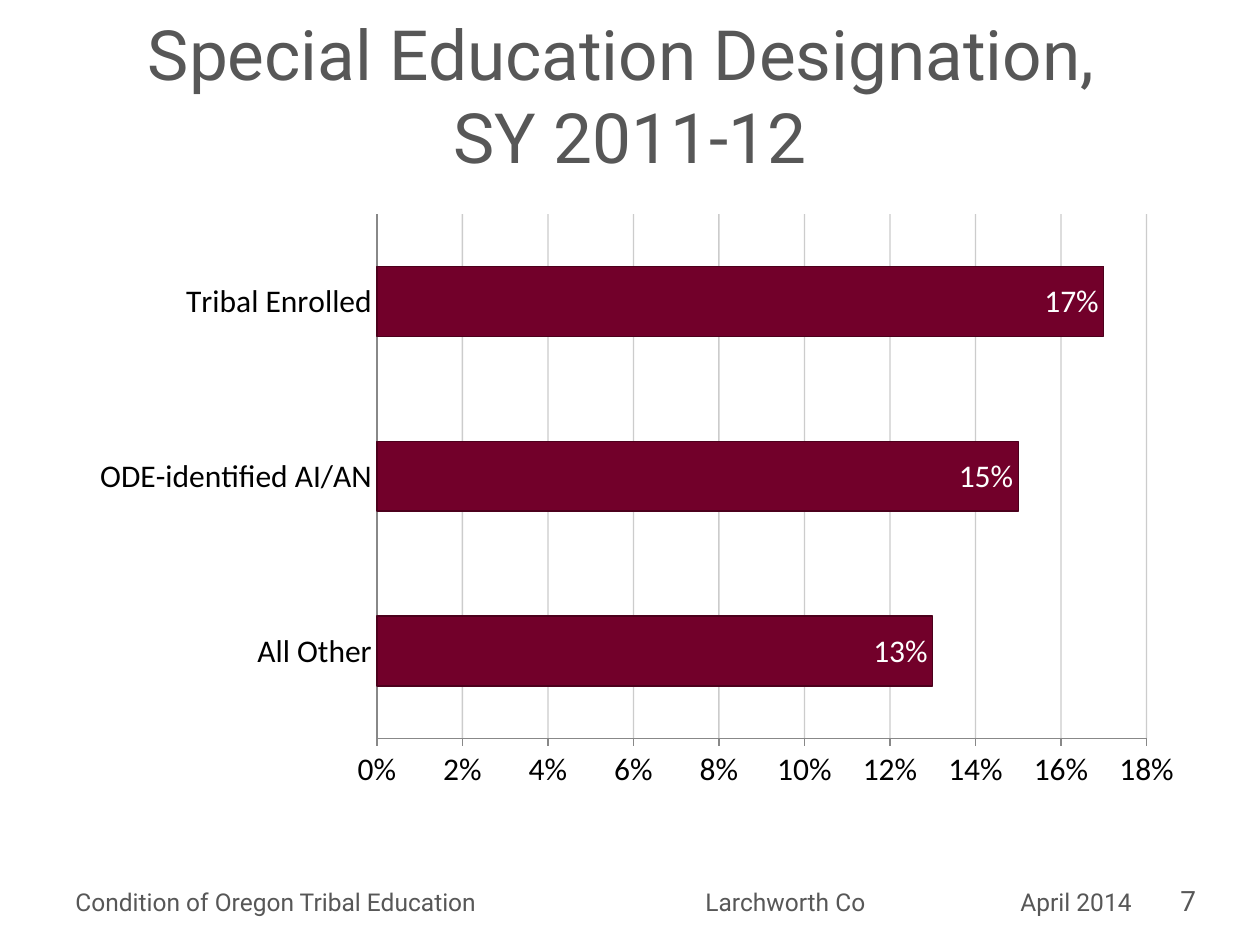
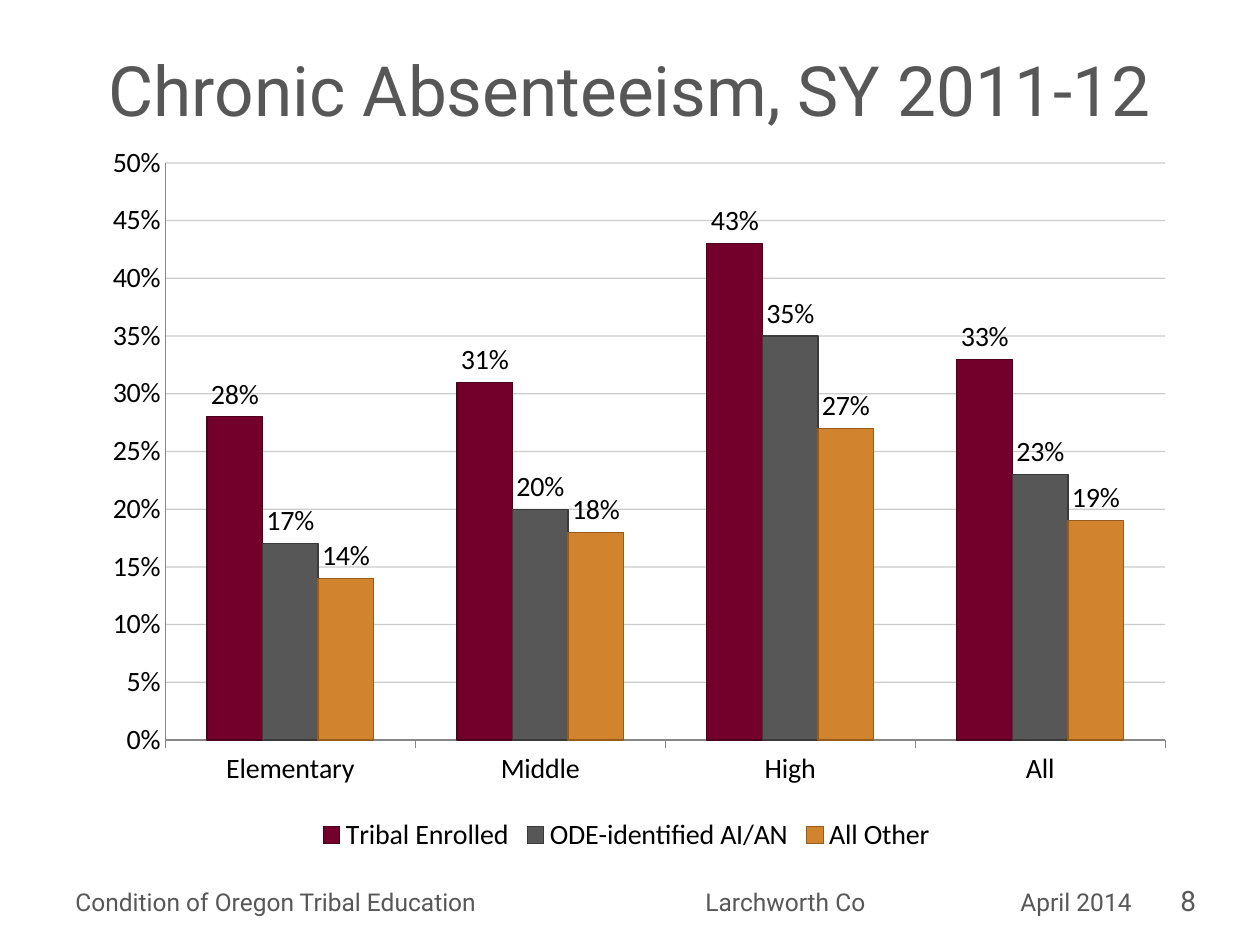
from dataclasses import dataclass

import pptx
import pptx.chart.data
import pptx.dml.color
import pptx.enum.chart
import pptx.enum.text
import pptx.oxml
import pptx.oxml.ns
import pptx.util

Pt = pptx.util.Pt
RGBColor = pptx.dml.color.RGBColor
XL = pptx.enum.chart
qn = pptx.oxml.ns.qn

# Shared colours and fonts
MAROON = RGBColor(0x72, 0x00, 0x2A)
MAROON_EDGE = RGBColor(0x4C, 0x00, 0x1C)
GREY = RGBColor(0x57, 0x57, 0x57)
GREY_EDGE = RGBColor(0x3A, 0x3A, 0x3A)
ORANGE = RGBColor(0xD1, 0x83, 0x2E)
ORANGE_EDGE = RGBColor(0x96, 0x5C, 0x1C)
AXIS = RGBColor(0x88, 0x88, 0x88)
BLACK = RGBColor(0, 0, 0)
WHITE = RGBColor(255, 255, 255)
TEXT_FONT = "Roboto"
CHART_FONT = "Calibri"
PERCENT = "0%"

FOOTER = "Condition of Oregon Tribal Education\tLarchworth Co\tApril 2014"
FOOTER_TABS = (360, 540)


@dataclass
class Series:
    name: str
    values: tuple[float, ...]
    fill: RGBColor
    edge: RGBColor


@dataclass
class ChartSlide:
    number: int
    title: str
    title_top: float
    box: tuple[float, float, float, float]
    plot: tuple[float, float, float, float]  # fractions of the chart
    kind: XL.XL_CHART_TYPE
    categories: tuple[str, ...]
    series: tuple[Series, ...]
    size: float
    top_value: float
    step: float
    cat_tick: XL.XL_TICK_MARK
    value_tick: XL.XL_TICK_MARK
    label_position: XL.XL_LABEL_POSITION
    label_color: RGBColor
    legend: bool


SLIDES = (
    ChartSlide(
        7, "Special Education Designation, \vSY 2011-12", 18,
        (44.64, 115.2, 639.36, 342), (0.267, 0.021, 0.688, 0.876),
        XL.XL_CHART_TYPE.BAR_CLUSTERED,
        ("All Other", "ODE-identified AI/AN", "Tribal Enrolled"),
        (Series("Series 1", (0.13, 0.15, 0.17), MAROON, MAROON_EDGE),),
        18, 0.18, 0.02, XL.XL_TICK_MARK.NONE, XL.XL_TICK_MARK.OUTSIDE,
        XL.XL_LABEL_POSITION.INSIDE_END, WHITE, False),
    ChartSlide(
        8, "Chronic Absenteeism, SY 2011-12", 15.12,
        (24.48, 82.08, 666.72, 408.24), (0.105, 0.027, 0.857, 0.808),
        XL.XL_CHART_TYPE.COLUMN_CLUSTERED,
        ("Elementary", "Middle", "High", "All"),
        (Series("Tribal Enrolled", (0.28, 0.31, 0.43, 0.33), MAROON, MAROON_EDGE),
         Series("ODE-identified AI/AN", (0.17, 0.20, 0.35, 0.23), GREY, GREY_EDGE),
         Series("All Other", (0.14, 0.18, 0.27, 0.19), ORANGE, ORANGE_EDGE)),
        16, 0.5, 0.05, XL.XL_TICK_MARK.OUTSIDE, XL.XL_TICK_MARK.NONE,
        XL.XL_LABEL_POSITION.OUTSIDE_END, BLACK, True),
)


def apply(target, **values) -> None:
    for name, value in values.items():
        setattr(target, name, value)


def style_font(font, size: float, color: RGBColor, name: str) -> None:
    apply(font, size=Pt(size), name=name, bold=False)
    font.color.rgb = color


def style_line(line, color: RGBColor) -> None:
    line.color.rgb = color
    line.width = Pt(0.75)


def add_title(s, title: str, top: float) -> None:
    sp = s.shapes.title
    apply(sp, left=Pt(36), top=Pt(top), width=Pt(648), height=Pt(71.28))
    tf = sp.text_frame
    tf.text = title
    apply(tf, word_wrap=True, auto_size=pptx.enum.text.MSO_AUTO_SIZE.NONE,
          vertical_anchor=pptx.enum.text.MSO_ANCHOR.MIDDLE)
    p = tf.paragraphs[0]
    p.alignment = pptx.enum.text.PP_ALIGN.CENTER
    for r in p.runs:
        style_font(r.font, 39.6, GREY, TEXT_FONT)


def add_text(s, text: str, box: tuple, size: float, tabs: tuple = ()) -> None:
    tf = s.shapes.add_textbox(*map(Pt, box)).text_frame
    tf.word_wrap = True
    p = tf.paragraphs[0]
    r = p.add_run()
    r.text = text
    style_font(r.font, size, GREY, TEXT_FONT)
    if tabs:
        tab_list = pptx.oxml.ns.qn("a:tabLst")
        stops = p._p.get_or_add_pPr().makeelement(tab_list, {})
        p._p.get_or_add_pPr().append(stops)
        for pos in tabs:
            stops.append(stops.makeelement(qn("a:tab"), {"pos": str(Pt(pos)), "algn": "l"}))


def add_footer(s, number: int) -> None:
    add_text(s, str(number), (667.44, 501.12, 50.4, 26.64), 16)
    add_text(s, FOOTER, (36, 503.28, 631.44, 24.48), 14, FOOTER_TABS)


def place_plot(chart, plot: tuple) -> None:
    """Fix the inner plot area as fractions of the chart."""
    area = chart._chartSpace.chart.plotArea
    for old in area.findall(qn("c:layout")):
        area.remove(old)
    layout = area.makeelement(qn("c:layout"), {})
    area.insert(0, layout)
    manual = layout.makeelement(qn("c:manualLayout"), {})
    layout.append(manual)
    settings = [("layoutTarget", "inner"), ("xMode", "edge"), ("yMode", "edge")]
    for tag, value in settings + list(zip("xywh", plot)):
        manual.append(manual.makeelement(qn(f"c:{tag}"), {"val": str(value)}))


def style_axes(chart, spec: ChartSlide) -> None:
    cat, val = chart.category_axis, chart.value_axis
    for axis, tick in ((cat, spec.cat_tick), (val, spec.value_tick)):
        apply(axis, major_tick_mark=tick, minor_tick_mark=XL.XL_TICK_MARK.NONE)
        style_line(axis.format.line, AXIS)
        style_font(axis.tick_labels.font, spec.size, BLACK, CHART_FONT)
    cat.has_major_gridlines = False
    apply(val, minimum_scale=0, maximum_scale=spec.top_value,
          major_unit=spec.step, has_major_gridlines=True)
    apply(val.tick_labels, number_format=PERCENT, number_format_is_linked=False)
    # Gridlines at a quarter opacity
    grid = val.major_gridlines
    style_line(grid.format.line, GREY_EDGE)
    color = next(grid._xAx.find(qn("c:majorGridlines")).iter(qn("a:srgbClr")))
    color.append(color.makeelement(qn("a:alpha"), {"val": "25000"}))


def add_chart(s, spec: ChartSlide) -> None:
    data = pptx.chart.data.CategoryChartData(number_format=PERCENT)
    data.categories = spec.categories
    for item in spec.series:
        data.add_series(item.name, item.values)
    chart = s.shapes.add_chart(spec.kind, *map(Pt, spec.box), data).chart
    apply(chart, has_title=False, has_legend=spec.legend)
    style_font(chart.font, spec.size, BLACK, CHART_FONT)
    if spec.legend:
        apply(chart.legend, position=XL.XL_LEGEND_POSITION.BOTTOM, include_in_layout=False)
        style_font(chart.legend.font, spec.size, BLACK, CHART_FONT)
    place_plot(chart, spec.plot)
    style_axes(chart, spec)

    # Bars and their labels
    apply(chart.plots[0], gap_width=150, overlap=0, vary_by_categories=False)
    for bars, item in zip(chart.plots[0].series, spec.series):
        bars.invert_if_negative = False
        bars.format.fill.solid()
        bars.format.fill.fore_color.rgb = item.fill
        style_line(bars.format.line, item.edge)
        labels = bars.data_labels
        apply(labels, show_value=True, position=spec.label_position,
              number_format=PERCENT, number_format_is_linked=False)
        style_font(labels.font, spec.size, spec.label_color, CHART_FONT)


def main() -> None:
    prs = pptx.Presentation()
    apply(prs, slide_width=Pt(720), slide_height=Pt(540))
    for spec in SLIDES:
        s = prs.slides.add_slide(prs.slide_layouts[5])
        s.background.fill.solid()
        s.background.fill.fore_color.rgb = WHITE
        add_footer(s, spec.number)
        add_title(s, spec.title, spec.title_top)
        add_chart(s, spec)
    prs.save("out.pptx")


if __name__ == "__main__":
    main()
